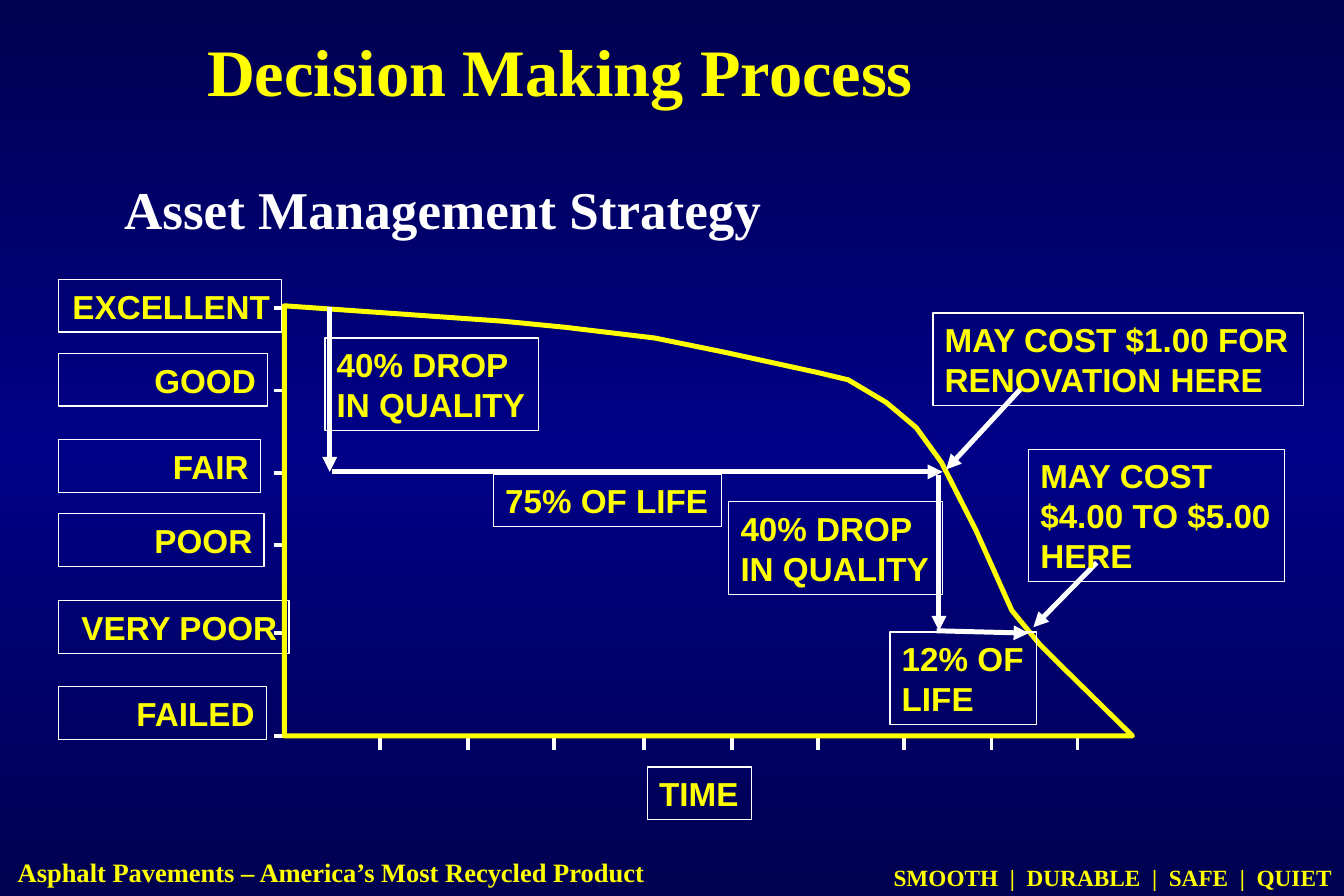
from copy import deepcopy

from lxml import etree
from pptx import Presentation
from pptx import util as u
from pptx.dml.color import RGBColor
from pptx.enum import shapes, text
from pptx.oxml.ns import qn

YELLOW, WHITE, NAVY, BLUE = "FFFF00", "FFFFFF", "000050", "000086"
LEFT, CENTER, RIGHT = text.PP_ALIGN.LEFT, text.PP_ALIGN.CENTER, text.PP_ALIGN.RIGHT
SERIF = {"name": "Times New Roman", "bold": True}
SANS = {"name": "Arial", "bold": True, "size": u.Pt(20)}


def color(code):
    return RGBColor.from_string(code)


class Slide:
    """Draw on one page laid out in 45 columns and 30 rows."""

    def __init__(self, deck):
        self.page = deck.slides.add_slide(deck.slide_layouts[6])
        self.column = deck.slide_width / 45
        self.row = deck.slide_height / 30

    def place(self, *grid):
        return [round(value * (self.row if i % 2 else self.column))
                for i, value in enumerate(grid)]

    def background(self, *codes):
        fill = self.page.background.fill
        fill.gradient()
        fill.gradient_angle = 90
        stops = self.page.element.xpath(".//a:gsLst")[0]
        stops.insert(1, deepcopy(stops[0]))
        for i, (stop, code) in enumerate(zip(fill.gradient_stops, codes)):
            stop.position = i / (len(codes) - 1)
            stop.color.rgb = color(code)

    def outline(self, shape, code, width):
        shape.line.color.rgb = color(code)
        shape.line.width = u.Pt(width)

    def set_text(self, shape, lines, style, code, align, insets):
        frame = shape.text_frame
        settings = {"word_wrap": True, "vertical_anchor": text.MSO_ANCHOR.MIDDLE,
                    "margin_left": u.Inches(insets[0]), "margin_right": u.Inches(insets[1])}
        for name, value in settings.items():
            setattr(frame, name, value)
        for i, line in enumerate(lines):
            para = frame.add_paragraph() if i else frame.paragraphs[0]
            para.alignment = align
            span = para.add_run()
            span.text = line
            span.font.color.rgb = color(code)
            for name, value in style.items():
                setattr(span.font, name, value)

    def heading(self, grid, words, size, code=YELLOW, align=LEFT):
        box = self.page.shapes.add_textbox(*self.place(*grid))
        self.set_text(box, [words], SERIF | {"size": u.Pt(size)}, code, align, (0.1, 0.1))

    def label(self, left, top, width, *lines, align=LEFT):
        height = 1.76 + 1.34 * (len(lines) - 1)
        box = self.page.shapes.add_shape(
            shapes.MSO_SHAPE.RECTANGLE, *self.place(left, top, width, height))
        box.shadow.inherit = False
        box.fill.background()
        self.outline(box, WHITE, 0.75)
        insets = (0, 0.1) if align == RIGHT else (0.1, 0)
        self.set_text(box, lines, SANS, YELLOW, align, insets)

    def line(self, grid, width=2.25, arrow=False):
        link = self.page.shapes.add_connector(
            shapes.MSO_CONNECTOR.STRAIGHT, *self.place(*grid))
        self.outline(link, WHITE, width)
        if arrow:
            stroke = link.element.xpath("./p:spPr/a:ln")[0]
            etree.SubElement(stroke, qn("a:tailEnd"), type="triangle")
        etree.SubElement(link.element.spPr, qn("a:effectLst"))

    def curve(self, points):
        start, *rest = [self.place(*point) for point in points]
        builder = self.page.shapes.build_freeform(*start)
        builder.add_line_segments(rest, close=True)
        shape = builder.convert_to_shape()
        shape.shadow.inherit = False
        shape.fill.background()
        self.outline(shape, YELLOW, 3)


RATINGS = [
    ("EXCELLENT", 9.36, 7.48, 10.32), ("GOOD", 11.84, 7, 13.08),
    ("FAIR", 14.72, 6.76, 15.84), ("POOR", 17.2, 6.88, 18.24),
    ("VERY POOR", 20.12, 7.72, 21.2), ("FAILED", 23, 6.96, 24.64),
]
TIME_TICKS = [12.72, 15.68, 18.56, 21.56, 24.52, 27.4, 30.28, 33.2, 36.08]
QUALITY_CURVE = [
    (9.52, 10.24), (16.88, 10.76), (18.92, 10.96), (21.92, 11.32), (24.28, 11.8),
    (27.4, 12.48), (28.4, 12.72), (29.68, 13.48), (30.68, 14.32), (31.52, 15.48),
    (32.68, 17.76), (33.88, 20.44), (34.8, 21.56), (35.72, 22.48), (37.92, 24.64),
    (9.52, 24.64),
]
ARROWS = [
    (31.36, 21.12, 34.44, 21.2), (11.12, 15.8, 31.56, 15.8), (31.44, 15.92, 31.44, 21.12),
    (11.04, 10.28, 11.04, 15.8), (34.16, 13.04, 31.68, 15.72), (36.72, 18.84, 34.6, 21),
]
NOTES = [
    (29.8, 21.16, 4.92, "12% OF", "LIFE"),
    (10.88, 11.32, 7.16, "40% DROP", "IN QUALITY"),
    (24.4, 16.8, 7.16, "40% DROP", "IN QUALITY"),
    (16.52, 15.88, 7.64, "75% OF LIFE"),
    (31.24, 10.48, 12.4, "MAY COST $1.00 FOR", "RENOVATION HERE"),
    (34.44, 15.04, 8.56, "MAY COST", "$4.00 TO $5.00", "HERE"),
    (21.68, 25.68, 3.48, "TIME"),
]


def main():
    deck = Presentation()
    deck.slide_width, deck.slide_height = u.Inches(11.25), u.Inches(7.5)
    slide = Slide(deck)
    slide.background(NAVY, BLUE, NAVY)
    slide.heading((0.2, 28.44, 25.3, 1.48), "Asphalt Pavements – America’s Most Recycled Product", 16)
    slide.heading((28.84, 28.68, 16.16, 1.36), "SMOOTH  |  DURABLE  |  SAFE  |  QUIET", 14, align=RIGHT)
    slide.heading((3.76, 5.68, 22.48, 2.56), "Asset Management Strategy", 32, WHITE)
    slide.heading((0, 0, 37.5, 4.68), "Decision Making Process", 40, align=CENTER)
    for words, top, width, tick in RATINGS:
        slide.line((9.52, tick, 9.16, tick))
        slide.label(1.96, top, width, words, align=RIGHT)
    for tick in TIME_TICKS:
        slide.line((tick, 24.7, tick, 25.1))
    slide.curve(QUALITY_CURVE)
    for arrow in ARROWS:
        slide.line(arrow, 3, arrow=True)
    for note in NOTES:
        slide.label(*note)
    deck.save("out.pptx")


if __name__ == "__main__":
    main()
